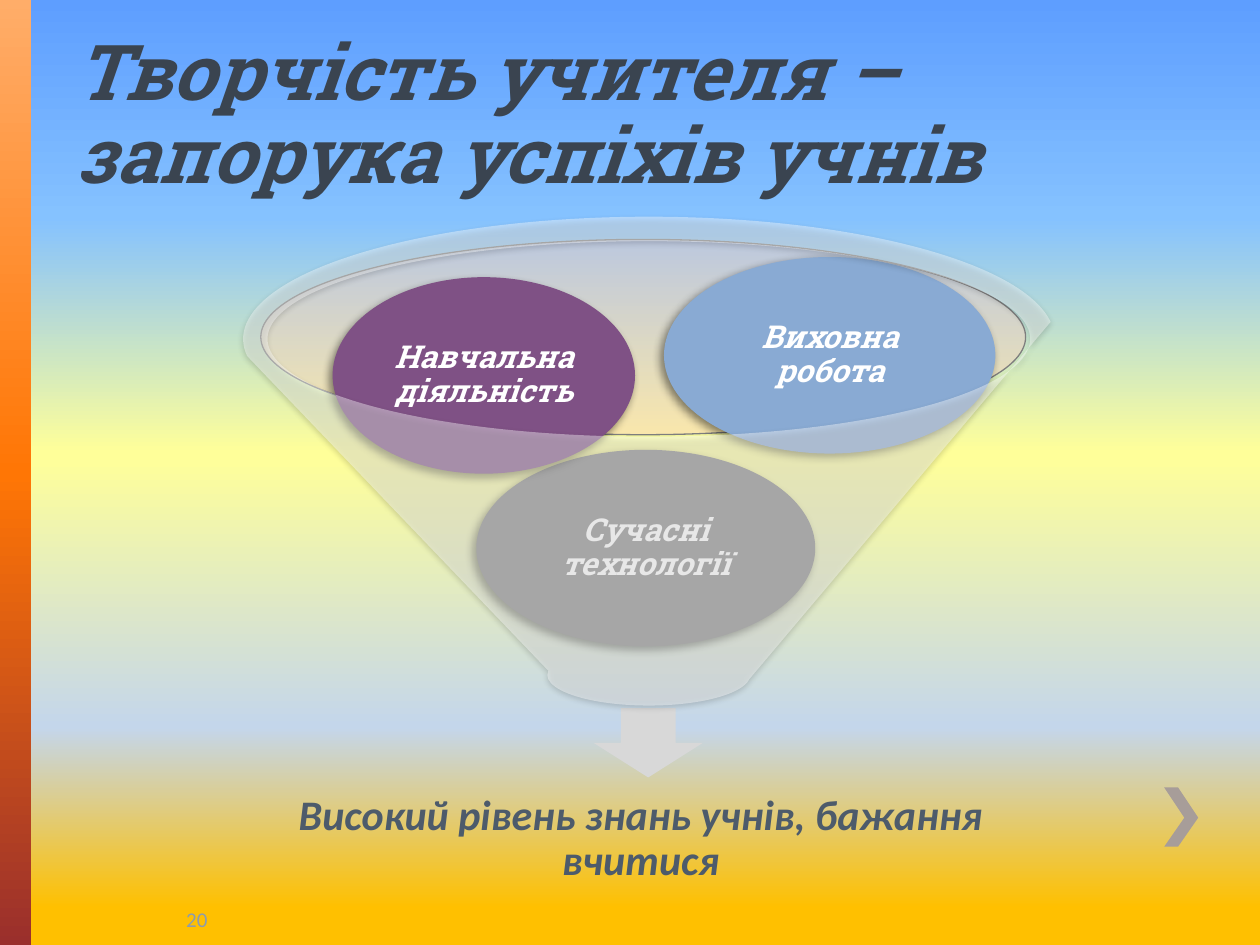
from lxml.etree import SubElement
from pptx import Presentation
from pptx.dml.color import RGBColor
from pptx.enum.shapes import MSO_SHAPE as SHAPE
from pptx.enum.text import MSO_ANCHOR as ANCHOR, MSO_AUTO_SIZE as AUTOSIZE, PP_ALIGN as ALIGN
from pptx.oxml.ns import qn
from pptx.util import Inches, Pt

TITLE = "Творчість учителя – запорука успіхів учнів"
RESULT = "Високий рівень знань учнів, бажання вчитися"
PAGE = "20"

WHITE = RGBColor(0xFF, 0xFF, 0xFF)
BLACK = RGBColor(0, 0, 0)
INK = RGBColor(0x3A, 0x44, 0x50)
TITLE_EDGE = RGBColor(0x67, 0x5D, 0x59)
RESULT_INK = RGBColor(0x4D, 0x5B, 0x6B)
PAGE_INK = RGBColor(0x8D, 0x9C, 0xAD)
CHEVRON = RGBColor(0xA7, 0x9D, 0x99)
PEACH = RGBColor(0xFF, 0xCA, 0xBD)
GREY = RGBColor(0x7F, 0x7F, 0x7F)
ARROW = RGBColor(0xD8, 0xD8, 0xD8)
PURPLE = RGBColor(0x7F, 0x51, 0x85)
BLUE = RGBColor(0x89, 0xAA, 0xD3)

# Gradient stops: position in percent, colour
SKY = [(0, RGBColor(0x5E, 0x9E, 0xFF)), (23, RGBColor(0x85, 0xC2, 0xFF)),
       (48, RGBColor(0xFF, 0xFF, 0x99)), (77, RGBColor(0xC4, 0xD6, 0xEB)),
       (96, RGBColor(0xFF, 0xC0, 0x00))]
STRIP = [(0, RGBColor(0xFF, 0xAD, 0x69)), (50, RGBColor(0xFF, 0x76, 0x05)),
         (100, RGBColor(0x9A, 0x2F, 0x2C))]

# Text, fill, (left, top, width, height)
BALLS = [
    ("Сучасні технології", GREY, (3.78, 3.57, 2.69, 1.56)),
    ("Навчальна діяльність", PURPLE, (2.64, 2.2, 2.4, 1.56)),
    ("Виховна робота", BLUE, (5.27, 2.04, 2.63, 1.56)),
]
CHEVRON_POINTS = [(9.35, 6.25), (9.24, 6.25), (9.4, 6.49), (9.24, 6.72),
                  (9.35, 6.72), (9.51, 6.49)]


def add_color(parent, color, alpha=100):
    clr = SubElement(parent, qn("a:srgbClr"), val=str(color))
    if alpha < 100:
        SubElement(clr, qn("a:alpha"), val=str(alpha * 1000))


def set_gradient(fill, stops):
    """Fill from top to bottom with any number of stops."""
    fill.gradient()
    grad = fill.gradient_stops[0]._gs.getparent().getparent()
    for child in list(grad):
        grad.remove(child)
    gs_lst = SubElement(grad, qn("a:gsLst"))
    for pos, color in stops:
        add_color(SubElement(gs_lst, qn("a:gs"), pos=str(pos * 1000)), color)
    SubElement(grad, qn("a:lin"), ang=str(90 * 60000), scaled="0")


def set_shadow(sp, alpha, blur, dist, angle):
    effects = sp._element.spPr.find(qn("a:effectLst"))
    shadow = SubElement(effects, qn("a:outerShdw"), blurRad=str(int(Pt(blur))),
                        dist=str(int(Pt(dist))), dir=str(angle * 60000), rotWithShape="0")
    add_color(shadow, BLACK, alpha)


def outline_text(r, color, width):
    rPr = r.font._element
    ln = SubElement(rPr, qn("a:ln"), w=str(int(Pt(width))))
    add_color(SubElement(ln, qn("a:solidFill")), color)
    rPr.insert(0, ln)


def add_shape(slide, kind, box, color=None, alpha=100):
    sp = slide.shapes.add_shape(kind, *map(Inches, box))
    sp.shadow.inherit = False
    sp.line.fill.background()
    if color is not None:
        sp.fill.solid()
        sp.fill.fore_color.rgb = color
        if alpha < 100:
            clr = sp._element.spPr.find(qn("a:solidFill"))[0]
            SubElement(clr, qn("a:alpha"), val=str(alpha * 1000))
    return sp


def write(sp, text, size, font, color, bold=True, align=ALIGN.CENTER,
          anchor=ANCHOR.MIDDLE, insets=(0.1, 0.05), spacing=0.9):
    """Set and format one paragraph; insets are horizontal, vertical."""
    tf = sp.text_frame
    tf.text = text
    tf.word_wrap = True
    tf.auto_size = AUTOSIZE.NONE
    tf.vertical_anchor = anchor
    tf.margin_left = tf.margin_right = Inches(insets[0])
    tf.margin_top = tf.margin_bottom = Inches(insets[1])
    p = tf.paragraphs[0]
    p.alignment = align
    p.line_spacing = spacing
    r = p.runs[0]
    r.font.size, r.font.name, r.font.color.rgb = Pt(size), font, color
    r.font.bold = r.font.italic = bold
    return r


def add_text(slide, box, *args, **kwargs):
    return write(slide.shapes.add_textbox(*map(Inches, box)), *args, **kwargs)


def main():
    prs = Presentation()
    prs.slide_width, prs.slide_height = Inches(10), Inches(7.5)
    s = prs.slides.add_slide(prs.slide_layouts[5])
    set_gradient(s.background.fill, SKY)

    strip = add_shape(s, SHAPE.RECTANGLE, (0, 0, 0.25, 7.5))
    set_gradient(strip.fill, STRIP)

    start, *rest = [(Inches(x), Inches(y)) for x, y in CHEVRON_POINTS]
    builder = s.shapes.build_freeform(*start)
    builder.add_line_segments(rest, close=True)
    chevron = builder.convert_to_shape()
    chevron.shadow.inherit = False
    chevron.fill.solid()
    chevron.fill.fore_color.rgb = CHEVRON
    chevron.line.fill.background()

    title = s.shapes.title
    title.left, title.top, title.width, title.height = map(Inches, (0.5, 0.3, 9, 1.34))
    r = write(title, TITLE, 44, "Roboto Slab", INK, align=ALIGN.LEFT, anchor=ANCHOR.BOTTOM)
    outline_text(r, TITLE_EDGE, 1)

    mouth = add_shape(s, SHAPE.OVAL, (2.07, 1.9, 6.07, 1.55), PEACH, 40)
    mouth.line.color.rgb = GREY
    mouth.line.width = Pt(0.75)
    add_shape(s, SHAPE.DOWN_ARROW, (4.71, 5.62, 0.87, 0.55), ARROW)
    add_text(s, (2.03, 5.98, 6.11, 1.36), RESULT, 24, "Calibri", RESULT_INK,
             insets=(0.19, 0.19))

    for text, color, box in BALLS:
        ball = add_shape(s, SHAPE.OVAL, box, color)
        set_shadow(ball, 45, 5, 3, 135)
        write(ball, text, 18, "Roboto Slab", WHITE, insets=(0.03, 0.03))

    funnel = add_shape(s, SHAPE.FUNNEL, (1.93, 1.72, 6.44, 3.88), WHITE, 40)
    set_shadow(funnel, 38, 3.1, 1.6, 90)

    add_text(s, (1.38, 7.17, 7.83, 0.25), PAGE, 12, "Calibri", PAGE_INK,
             bold=False, align=ALIGN.LEFT, spacing=1.0)
    prs.save("out.pptx")


if __name__ == "__main__":
    main()
